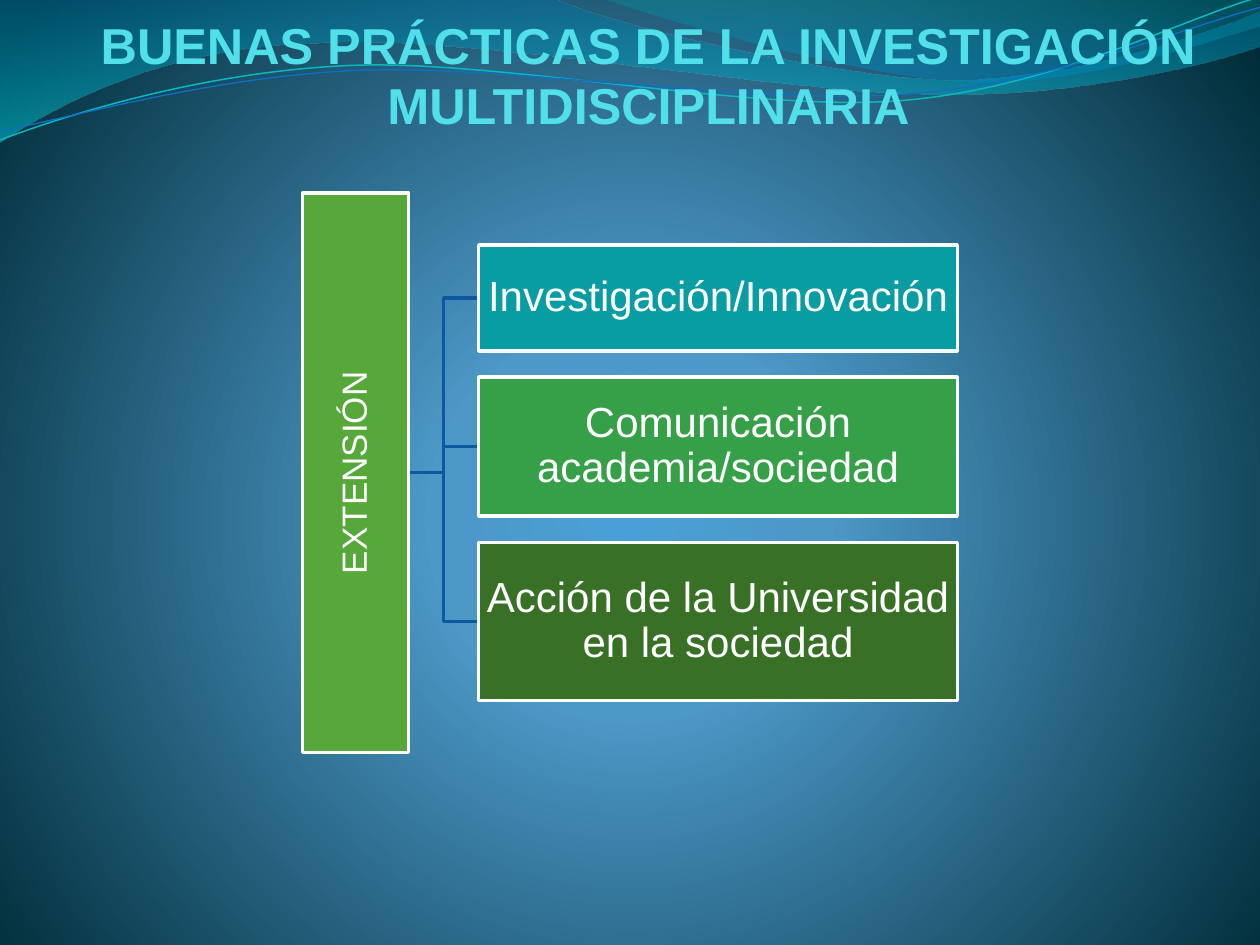
import math

from lxml import etree
from pptx import Presentation
from pptx.dml.color import RGBColor
from pptx.enum.shapes import MSO_CONNECTOR, MSO_SHAPE
from pptx.enum.text import MSO_ANCHOR, MSO_AUTO_SIZE, PP_ALIGN
from pptx.oxml.ns import qn
from pptx.util import Cm, Pt

ELBOW = MSO_CONNECTOR.ELBOW
RECTANGLE = MSO_SHAPE.RECTANGLE
MIDDLE, BOTTOM = MSO_ANCHOR.MIDDLE, MSO_ANCHOR.BOTTOM
CENTER = PP_ALIGN.CENTER
NO_AUTOSIZE = MSO_AUTO_SIZE.NONE

FONT = "Arial"
COLORS = {
    "glow": "4AA0D6", "sky": "4C98C7", "night": "002C38",
    "wave_blue": "0074A1", "wave_cyan": "00C6CF",
    "crest_teal": "00A1A9", "crest_blue": "008BBF",
    "line_teal": "0AB8BF", "line_blue": "0F6FC6",
    "title": "51E0EA", "white": "FFFFFF", "connector": "0C599F",
    "extension": "55A839", "research": "089CA3",
    "communication": "36A048", "action": "387026",
}

# Outlines in cm: each part holds one point for a corner, three for a Bézier curve.
WAVE = [
    [(0, 0)], [(11.18, -0.03)],
    [(12.09, 0.43), (16.87, 1.6), (19.25, 1.6)],
    [(21.67, 1.6), (24.33, 0.66), (25.4, 0.23)],
    [(25.43, 0.91)],
    [(24.97, 1.12), (22.1, 1.93), (18.95, 1.9)],
    [(15.8, 1.9), (9.7, 0.71), (6.53, 0.86)],
    [(3.28, 0.91), (1.17, 2.11), (-0.03, 2.87)],
]
CREST = [
    [(12.17, -0.03)],
    [(12.93, 0.28), (17.32, 1.57), (19.53, 1.65)],
    [(21.74, 1.75), (24.41, 0.81), (25.4, 0.53)],
    [(25.4, 0)],
]
TEAL_LINE = [
    [(0, 2.82)],
    [(1.22, 2.36), (4.01, 1.45), (7.04, 1.32)],
    [(10.03, 1.19), (15.06, 2.26), (18.11, 2.03)],
    [(21.16, 1.8), (23.83, 0.38), (25.35, -0.05)],
]
BLUE_LINE = [
    [(0, 2.64)],
    [(1.19, 2.44), (4.17, 1.55), (7.19, 1.42)],
    [(10.24, 1.3), (15.16, 2.13), (18.21, 1.9)],
    [(21.23, 1.7), (23.9, 0.53), (25.4, 0.15)],
]
LINE_TILT = 2.7
LINE_PIVOT = (12.67, 1.47)

BRANCHES = [  # text, colour, height in cm
    ("Investigación/Innovación", "research", 2.14),
    ("Comunicación academia/sociedad", "communication", 2.8),
    ("Acción de la Universidad en la sociedad", "action", 3.19),
]


def color(name):
    return RGBColor.from_string(COLORS[name])


def set_gradient(element, stops, radial=False):
    """Fill the first gradient in element with (position, colour, opacity) stops."""
    gradient = next(element.iter(qn("a:gradFill")))
    for child in list(gradient):
        gradient.remove(child)
    stop_list = etree.SubElement(gradient, qn("a:gsLst"))
    for position, name, opacity in stops:
        stop = etree.SubElement(stop_list, qn("a:gs"), pos=str(position * 1000))
        tint = etree.SubElement(stop, qn("a:srgbClr"), val=COLORS[name])
        if opacity < 100:
            etree.SubElement(tint, qn("a:alpha"), val=str(opacity * 1000))
    if radial:
        center = etree.SubElement(gradient, qn("a:path"))
        center.set("path", "circle")
        etree.SubElement(center, qn("a:fillToRect"),
                         l="10000", t="110000", r="10000", b="100000")
    else:
        etree.SubElement(gradient, qn("a:lin"), ang="5400000", scaled="1")


def turn(point, degrees):
    """Turn a point clockwise about the pivot of the thin lines."""
    angle = math.radians(degrees)
    x, y = point[0] - LINE_PIVOT[0], point[1] - LINE_PIVOT[1]
    return (LINE_PIVOT[0] + x * math.cos(angle) - y * math.sin(angle),
            LINE_PIVOT[1] + x * math.sin(angle) + y * math.cos(angle))


def add_outline(slide, outline, close):
    """Build a freeform through the end points, then bend its curved segments."""
    parts = [[(Cm(x), Cm(y)) for x, y in part] for part in outline]
    builder = slide.shapes.build_freeform(*parts[0][-1])
    builder.add_line_segments([part[-1] for part in parts[1:]], close=close)
    shape = builder.convert_to_shape()
    shape.shadow.inherit = False
    segments = list(shape.element.iter(qn("a:lnTo")))
    for part, segment in zip(parts[1:], segments):
        if len(part) == 3:
            curve = etree.Element(qn("a:cubicBezTo"))
            for x, y in part:
                etree.SubElement(curve, qn("a:pt"), x=str(x - shape.left),
                                 y=str(y - shape.top))
            segment.getparent().replace(segment, curve)
    return shape


def add_backdrop(slide):
    slide.background.fill.gradient()
    set_gradient(slide.element, [(0, "glow", 100), (25, "sky", 100),
                                 (100, "night", 100)], radial=True)
    for outline, stops in (
        (WAVE, [(0, "wave_blue", 45), (100, "wave_cyan", 55)]),
        (CREST, [(0, "crest_teal", 30), (80, "crest_blue", 45)]),
    ):
        shape = add_outline(slide, outline, close=True)
        shape.line.fill.background()
        shape.fill.gradient()
        set_gradient(shape.element, stops)
    for outline, name, width in ((TEAL_LINE, "line_teal", 0.85),
                                 (BLUE_LINE, "line_blue", 0.75)):
        level = [[turn(point, LINE_TILT) for point in part] for part in outline]
        shape = add_outline(slide, level, close=False)
        shape.rotation = -LINE_TILT
        shape.fill.background()
        shape.line.color.rgb = color(name)
        shape.line.width = Pt(width)


def set_text(shape, text, size, name, anchor, margin, bold=False):
    frame = shape.text_frame
    frame.text = text
    frame.word_wrap = True
    frame.auto_size = NO_AUTOSIZE
    frame.vertical_anchor = anchor
    frame.margin_left = frame.margin_right = Cm(margin)
    frame.margin_top = frame.margin_bottom = Cm(margin)
    paragraph = frame.paragraphs[0]
    paragraph.alignment = CENTER
    paragraph.font.name = FONT
    paragraph.font.size = Pt(size)
    paragraph.font.bold = bold
    paragraph.font.color.rgb = color(name)
    return paragraph


def place_title(slide, left, top, width, height):
    title = slide.shapes.title
    title.left, title.top = Cm(left), Cm(top)
    title.width, title.height = Cm(width), Cm(height)
    set_text(title, "BUENAS PRÁCTICAS DE LA INVESTIGACIÓN MULTIDISCIPLINARIA",
             28.8, "title", BOTTOM, 0, bold=True)
    title.text_frame.margin_right = Cm(0.05)
    # Bring the title in front of the waves.
    title.element.getparent().append(title.element)


def add_box(slide, left, top, width, height, text, size, fill):
    shape = slide.shapes.add_shape(RECTANGLE, Cm(left), Cm(top),
                                   Cm(width), Cm(height))
    shape.shadow.inherit = False
    shape.fill.solid()
    shape.fill.fore_color.rgb = color(fill)
    shape.line.color.rgb = color("white")
    shape.line.width = Pt(2)
    set_text(shape, text, size, "white", MIDDLE, 0.04).line_spacing = 0.9
    return shape


def add_elbow(slide, start_x, start_y, end_x, end_y):
    connector = slide.shapes.add_connector(ELBOW, Cm(start_x), Cm(start_y),
                                           Cm(end_x), Cm(end_y))
    connector.line.color.rgb = color("connector")
    connector.line.width = Pt(2)
    etree.SubElement(connector.element.spPr, qn("a:effectLst"))


def add_hierarchy(slide, left, top, width, height):
    """Draw the upright root box and its branches, stacked about its middle."""
    root_width, column_gap, row_gap = 2.14, 1.41, 0.53
    middle = top + height / 2
    root_right = left + root_width
    branch_left = root_right + column_gap
    stack = sum(branch[2] for branch in BRANCHES) + row_gap * (len(BRANCHES) - 1)
    branch_top = middle - stack / 2
    rows = []
    for text, fill, branch_height in BRANCHES:
        rows.append((branch_top, branch_height, text, fill))
        branch_top += branch_height + row_gap
    for row_top, row_height, _, _ in reversed(rows):
        add_elbow(slide, root_right, middle, branch_left, row_top + row_height / 2)
    root = add_box(slide, left + (root_width - height) / 2,
                   middle - root_width / 2, height, root_width,
                   "EXTENSIÓN", 20, "extension")
    root.rotation = 270
    for row_top, row_height, text, fill in rows:
        add_box(slide, branch_left, row_top, left + width - branch_left,
                row_height, text, 24, fill)


def main():
    presentation = Presentation()
    presentation.slide_width, presentation.slide_height = Cm(25.4), Cm(19.05)
    slide = presentation.slides.add_slide(presentation.slide_layouts[5])
    add_backdrop(slide)
    place_title(slide, 0.8, 1.04, 24.6, 1.68)
    add_hierarchy(slide, 6.1, 3.89, 13.2, 11.28)
    presentation.save("out.pptx")


if __name__ == "__main__":
    main()
